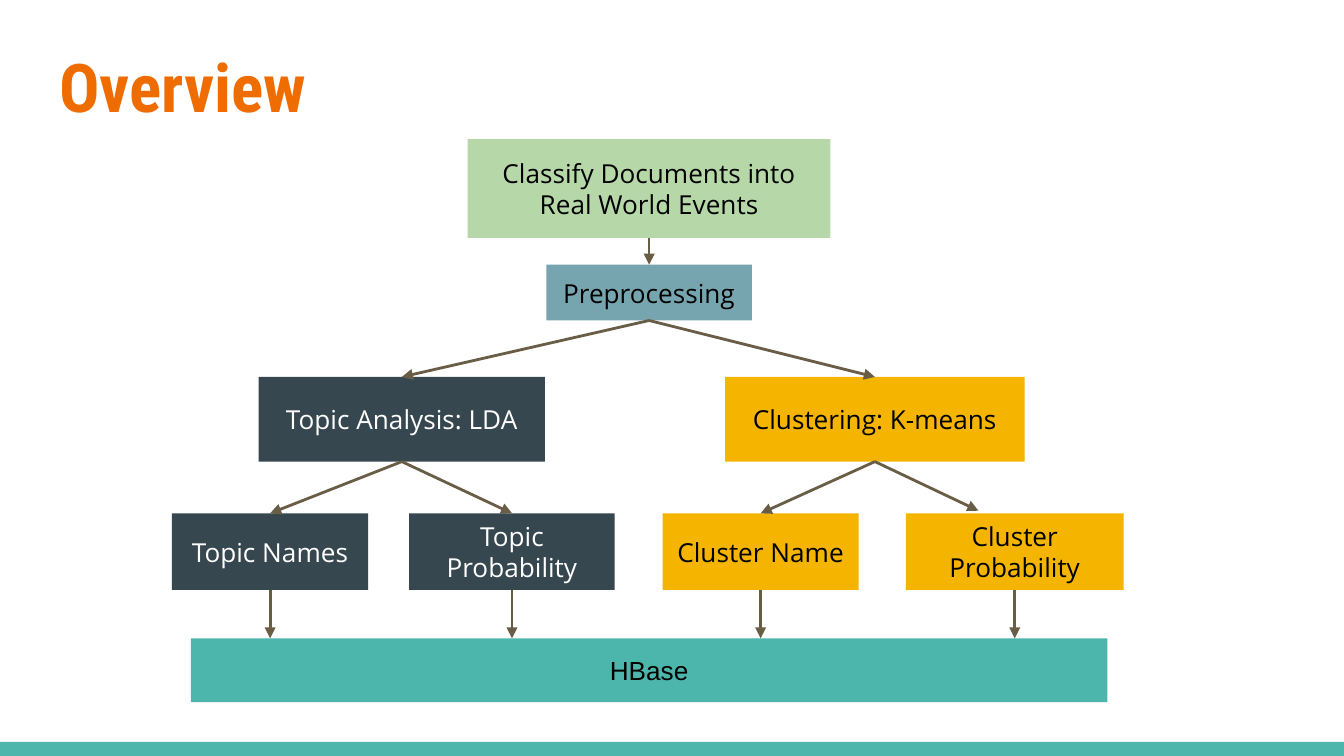
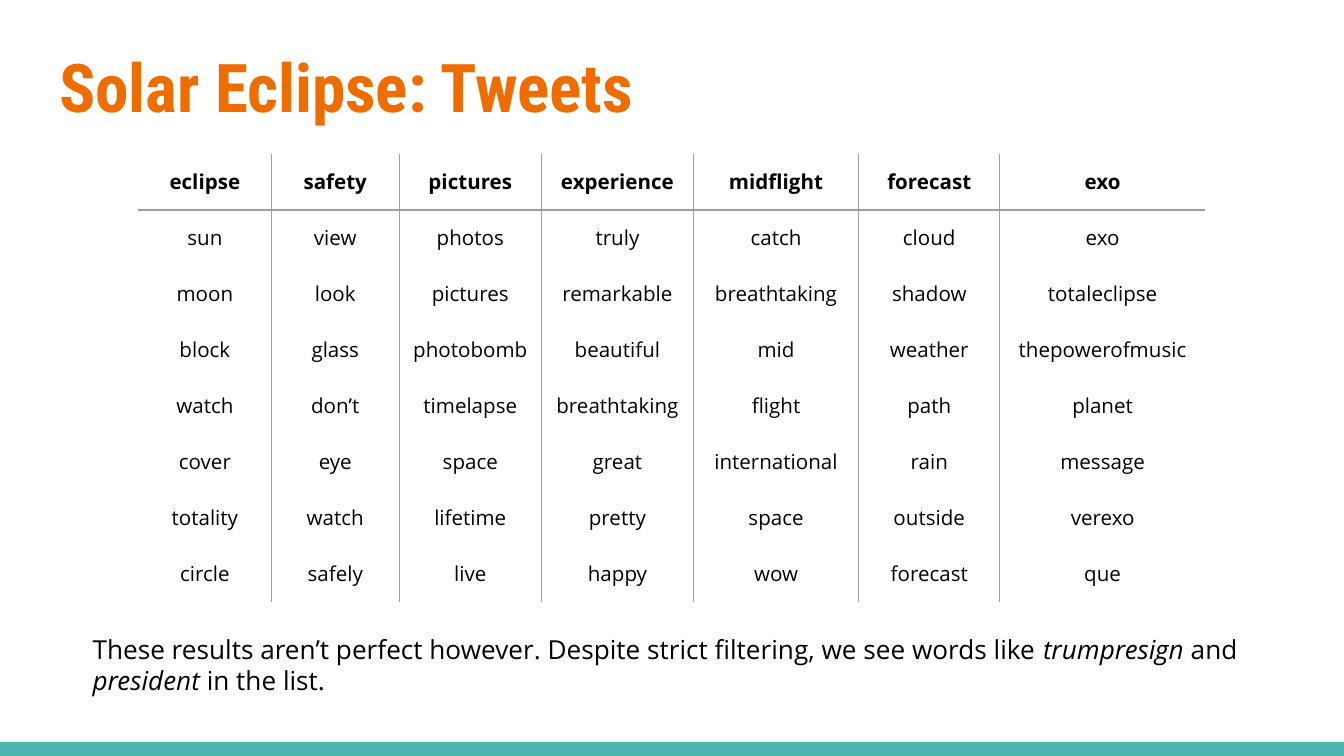
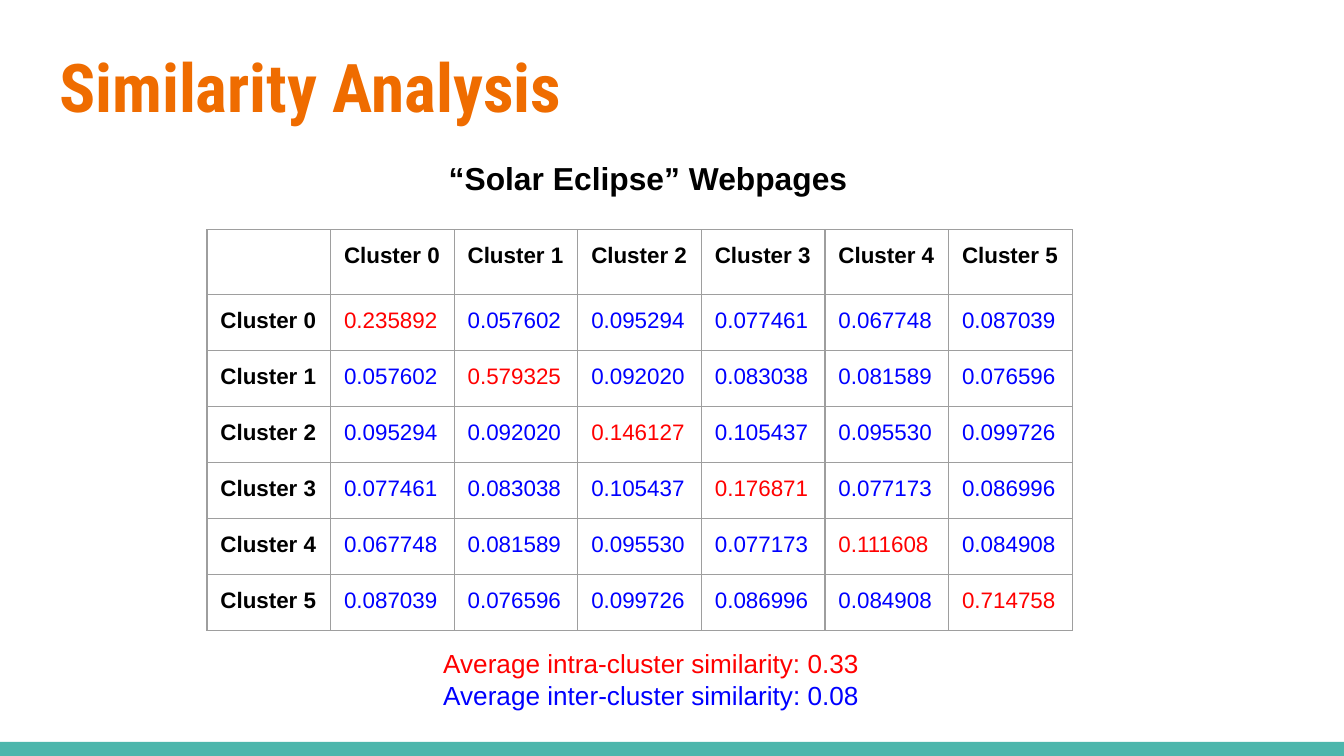
import pptx
import pptx.dml.color
import pptx.enum.shapes
import pptx.enum.text
import pptx.oxml.ns
import pptx.util
from lxml import etree

SLIDE_WIDTH = pptx.util.Inches(10)
SLIDE_HEIGHT = SLIDE_WIDTH * 9 // 16
CELL = SLIDE_WIDTH // 100  # side of one square of the layout grid
INSET = pptx.util.Inches(0.1)

ORANGE, TEAL, BLACK, WHITE = "EF6C00", "4DB6AC", "000000", "FFFFFF"
GREEN, STEEL, SLATE, YELLOW = "B6D7A8", "76A5AF", "37474F", "F4B400"
BROWN, GREY, RED, BLUE = "695D46", "9E9E9E", "FF0000", "0000FF"
TITLE_FONT, BODY_FONT, PLAIN_FONT = "Roboto Condensed", "Open Sans", "Arial"

LEFT = pptx.enum.text.PP_ALIGN.LEFT
CENTER = pptx.enum.text.PP_ALIGN.CENTER
TOP = pptx.enum.text.MSO_ANCHOR.TOP
MIDDLE = pptx.enum.text.MSO_ANCHOR.MIDDLE
BORDER_TAGS = {"left": "a:lnL", "right": "a:lnR", "top": "a:lnT", "bottom": "a:lnB"}

TWEET_TOPICS = [
    "eclipse safety pictures experience midflight forecast exo",
    "sun view photos truly catch cloud exo",
    "moon look pictures remarkable breathtaking shadow totaleclipse",
    "block glass photobomb beautiful mid weather thepowerofmusic",
    "watch don’t timelapse breathtaking flight path planet",
    "cover eye space great international rain message",
    "totality watch lifetime pretty space outside verexo",
    "circle safely live happy wow forecast que",
]

# Each row starts on the diagonal; the matrix is symmetric.
SIMILARITY = [
    ["0.235892", "0.057602", "0.095294", "0.077461", "0.067748", "0.087039"],
    ["0.579325", "0.092020", "0.083038", "0.081589", "0.076596"],
    ["0.146127", "0.105437", "0.095530", "0.099726"],
    ["0.176871", "0.077173", "0.086996"],
    ["0.111608", "0.084908"],
    ["0.714758"],
]


def color(hex_string):
    return pptx.dml.color.RGBColor.from_string(hex_string)


def grid(*counts):
    return [round(count * CELL) for count in counts]


def add_element(parent, tag, **attributes):
    return etree.SubElement(parent, pptx.oxml.ns.qn(tag), attributes)


class Deck:
    """Holds the presentation, its style and the current slide."""

    def __init__(self):
        self.presentation = pptx.Presentation()
        self.presentation.slide_width = SLIDE_WIDTH
        self.presentation.slide_height = SLIDE_HEIGHT
        self.layout = self.presentation.slide_layouts[5]
        self.slide = None

    def add_slide(self, title):
        first = self.slide is None
        self.slide = self.presentation.slides.add_slide(self.layout)
        if first:
            band = self.box("", (0, 55.2, 100, 1.05), TEAL)
            self.layout.shapes.element.append(band.element)
        placeholder = self.slide.shapes.title
        placeholder.left, placeholder.top, placeholder.width, placeholder.height = grid(
            3.4, 2.4, 93.2, 7.7)
        self.frame(placeholder.text_frame, TOP)
        self.fill_paragraph(placeholder.text_frame.paragraphs[0], title, 36, TITLE_FONT,
                            ORANGE, bold=True)

    def frame(self, text_frame, anchor):
        text_frame.word_wrap = True
        text_frame.auto_size = pptx.enum.text.MSO_AUTO_SIZE.NONE
        text_frame.vertical_anchor = anchor
        text_frame.margin_left = text_frame.margin_right = INSET
        text_frame.margin_top = text_frame.margin_bottom = INSET

    def fill_paragraph(self, paragraph, text, size, font, ink=BLACK, bold=False, align=LEFT):
        """Fill a paragraph; every second part between asterisks is italic."""
        paragraph.alignment = align
        paragraph.font.size = pptx.util.Pt(size)
        paragraph.font.name = font
        paragraph.font.bold = bold
        paragraph.font.color.rgb = color(ink)
        for index, part in enumerate(text.split("*")):
            run = paragraph.add_run()
            run.text = part
            if index % 2:
                run.font.italic = True

    def box(self, text, place, fill, ink=BLACK, font=BODY_FONT):
        shape = self.slide.shapes.add_shape(
            pptx.enum.shapes.MSO_SHAPE.RECTANGLE, *grid(*place))
        shape.shadow.inherit = False
        shape.fill.solid()
        shape.fill.fore_color.rgb = color(fill)
        shape.line.fill.background()
        if text:
            self.frame(shape.text_frame, MIDDLE)
            self.fill_paragraph(shape.text_frame.paragraphs[0], text, 14, font, ink,
                                align=CENTER)
        return shape

    def text(self, lines, place, size, font, inks=(BLACK,), bold=False, align=LEFT):
        text_frame = self.slide.shapes.add_textbox(*grid(*place)).text_frame
        self.frame(text_frame, TOP)
        for index, (line, ink) in enumerate(zip(lines, inks)):
            paragraph = text_frame.add_paragraph() if index else text_frame.paragraphs[0]
            self.fill_paragraph(paragraph, line, size, font, ink, bold, align)

    def arrow(self, source, target=None, point=None, width=1.5):
        """Lead from the bottom of a box to the top of another, or to a point."""
        end = point or (0, 0)
        connector = self.slide.shapes.add_connector(
            pptx.enum.shapes.MSO_CONNECTOR.STRAIGHT, 0, 0, *end)
        connector.begin_connect(source, 2)
        if target is not None:
            connector.end_connect(target, 0)
        connector.line.width = pptx.util.Pt(width)
        connector.line.color.rgb = color(BROWN)
        properties = connector.element.spPr
        add_element(properties.find(pptx.oxml.ns.qn("a:ln")), "a:tailEnd", type="triangle")
        add_element(properties, "a:effectLst")

    def table(self, place, columns, row_height, rows, style, borders):
        """Draw rows of text; style and borders give each cell's look by row and column."""
        left, top = place
        frame = self.slide.shapes.add_table(
            len(rows), len(columns), *grid(left, top, sum(columns), row_height * len(rows)))
        table = frame.table
        table.first_row = table.horz_banding = False
        for column, width in zip(table.columns, columns):
            column.width, = grid(width)
        for row_index, row in enumerate(rows):
            table.rows[row_index].height, = grid(row_height)
            for column_index, text in enumerate(row):
                cell = table.cell(row_index, column_index)
                cell.margin_left = cell.margin_right = INSET
                cell.margin_top = cell.margin_bottom = INSET
                self.fill_paragraph(cell.text_frame.paragraphs[0], text,
                                    **style(row_index, column_index))
                self.cell_borders(cell, borders(row_index, column_index))
                cell.fill.background()

    def cell_borders(self, cell, sides):
        properties = cell._tc.get_or_add_tcPr()
        for side, tag in BORDER_TAGS.items():
            line = add_element(properties, tag, w=str(pptx.util.Pt(0.75)))
            if side in sides:
                add_element(add_element(line, "a:solidFill"), "a:srgbClr", val=GREY)
            else:
                add_element(line, "a:noFill")


def add_overview(deck):
    deck.add_slide("Overview")
    classify = deck.box("Classify Documents into Real World Events",
                        (34.8, 10.35, 27, 7.35), GREEN)
    preprocessing = deck.box("Preprocessing", (40.65, 19.7, 15.3, 4.15), STEEL)
    topics = deck.box("Topic Analysis: LDA", (19.25, 28.05, 21.3, 6.3), SLATE, WHITE)
    clusters = deck.box("Clustering: K-means", (53.95, 28.05, 22.3, 6.3), YELLOW)
    results = [
        deck.box(text, (left, 38.2, width, 5.7), fill, ink)
        for text, left, width, fill, ink in [
            ("Topic Names", 12.8, 14.6, SLATE, WHITE),
            ("Topic Probability", 30.45, 15.3, SLATE, WHITE),
            ("Cluster Name", 49.3, 14.6, YELLOW, BLACK),
            ("Cluster Probability", 67.4, 16.2, YELLOW, BLACK),
        ]
    ]
    store_top = 47.5
    deck.box("HBase", (14.2, store_top, 68.2, 4.75), TEAL, font=PLAIN_FONT)

    deck.arrow(classify, preprocessing, width=0.75)
    for method in (topics, clusters):
        deck.arrow(preprocessing, method)
    for method, result in zip((topics, topics, clusters), results):
        deck.arrow(method, result)
    deck.arrow(clusters, point=grid(72.8, 38))
    for result in results:
        deck.arrow(result, point=(result.left + result.width // 2, *grid(store_top)))


def add_tweets(deck):
    deck.add_slide("Solar Eclipse: Tweets")
    columns = [9.9, 9.5, 10.6, 11.3, 12.3, 10.5, 15.3]

    def style(row, column):
        return dict(size=11, font=BODY_FONT, bold=row == 0, align=CENTER)

    def borders(row, column):
        inner = {"left": column > 0, "right": column < len(columns) - 1,
                 "top": row == 1, "bottom": row == 0}
        return [side for side, drawn in inner.items() if drawn]

    deck.table((10.3, 11.45), columns, 4.17,
               [line.split() for line in TWEET_TOPICS], style, borders)
    deck.text(["These results aren’t perfect however. Despite strict filtering, "
               "we see words like *trumpresign* and *president* in the list."],
              (5.9, 46.1, 88.1, 6.1), 14, BODY_FONT)


def add_similarity(deck):
    deck.add_slide("Similarity Analysis")
    deck.text(["“Solar Eclipse” Webpages"], (32.4, 10.8, 33.8, 5.5), 17, PLAIN_FONT, bold=True)
    count = len(SIMILARITY)
    names = [f"Cluster {index}" for index in range(count)]
    rows = [["", *names]]
    for row, name in enumerate(names):
        rows.append([name] + [SIMILARITY[min(row, column)][abs(row - column)]
                              for column in range(count)])

    def style(row, column):
        header = row == 0 or column == 0
        ink = BLACK if header else RED if row == column else BLUE
        return dict(size=12, font=PLAIN_FONT, ink=ink, bold=header)

    deck.table((15.4, 17.1), [9.2] * (count + 1), 4.17, rows, style,
               lambda row, column: BORDER_TAGS)
    deck.text(["Average intra-cluster similarity: 0.33", "Average inter-cluster similarity: 0.08"],
              (17, 47.2, 62.9, 4.9), 14, PLAIN_FONT, (RED, BLUE), align=CENTER)


def main():
    deck = Deck()
    add_overview(deck)
    add_tweets(deck)
    add_similarity(deck)
    deck.presentation.save("out.pptx")


if __name__ == "__main__":
    main()
